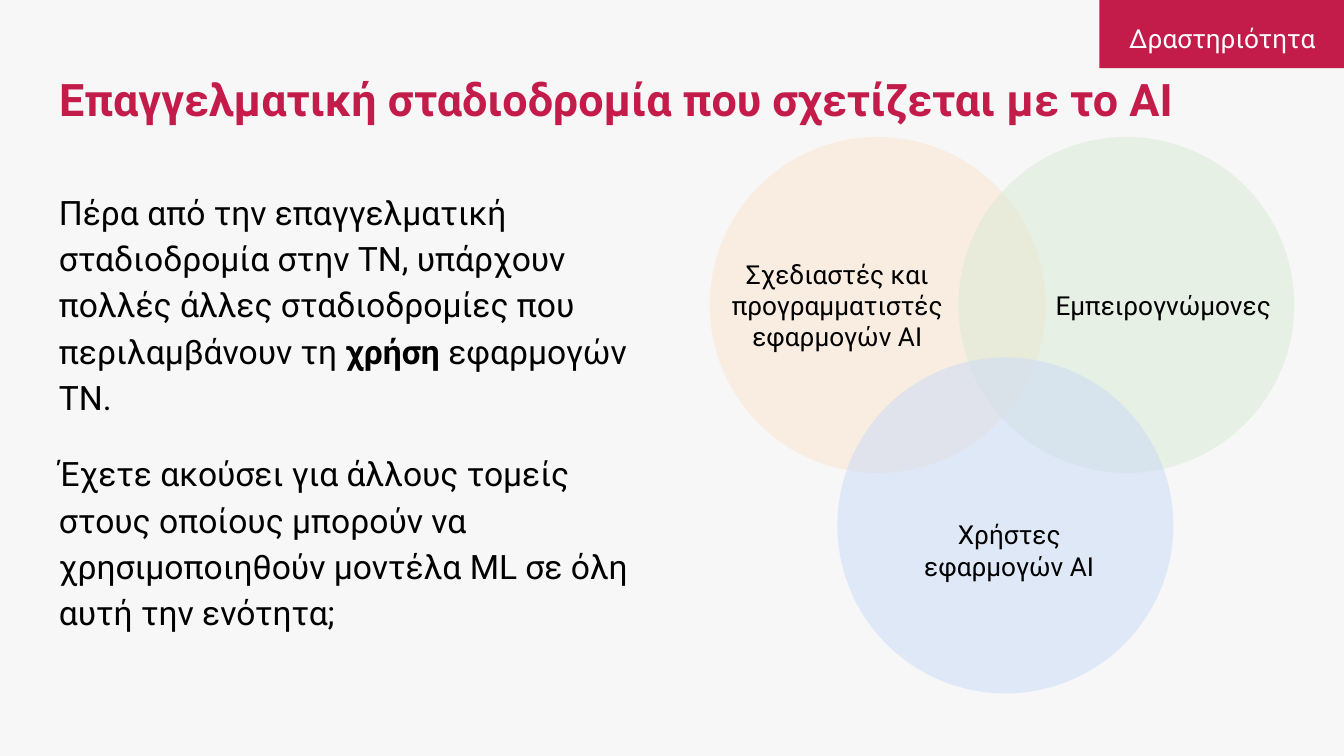
from pptx import Presentation
from pptx.dml.color import RGBColor
from pptx.enum.shapes import MSO_SHAPE
from pptx.enum.text import MSO_ANCHOR, MSO_AUTO_SIZE, PP_ALIGN
from pptx.oxml.ns import qn
from pptx.util import Pt
from lxml import etree

RECTANGLE, OVAL = MSO_SHAPE.RECTANGLE, MSO_SHAPE.OVAL
LEFT, CENTER = PP_ALIGN.LEFT, PP_ALIGN.CENTER
TOP, MIDDLE = MSO_ANCHOR.TOP, MSO_ANCHOR.MIDDLE
NO_AUTOFIT = MSO_AUTO_SIZE.NONE

COLORS = {
    "background": "F7F7F7",
    "accent": "C31C4A",
    "text": "000000",
    "white": "FFFFFF",
    "designers": "FCE5CD",
    "experts": "D9EAD3",
    "users": "C9DAF8",
}
TITLE_ONLY = 5
MARGIN = 24.5
CIRCLE_SIZE = 180


class SlideBuilder:
    font = "Roboto"
    inset = Pt(7.2)

    def __init__(self, deck):
        self.slide = deck.slides.add_slide(deck.slide_layouts[TITLE_ONLY])
        fill = self.slide.background.fill
        fill.solid()
        fill.fore_color.rgb = self.color("background")

    def color(self, name):
        return RGBColor.from_string(COLORS[name])

    def set_text(self, box, *paragraphs, size=14, color="text", bold=False,
                 align=LEFT, anchor=TOP, line_spacing=1.0, gap=0):
        """Fill a box; each paragraph is a list of spans, odd ones emphasised."""
        frame = box.text_frame
        frame.word_wrap = True
        frame.auto_size = NO_AUTOFIT
        frame.vertical_anchor = anchor
        frame.margin_left = frame.margin_right = self.inset
        frame.margin_top = frame.margin_bottom = self.inset
        for index, spans in enumerate(paragraphs):
            para = frame.add_paragraph() if index else frame.paragraphs[0]
            para.alignment = align
            para.line_spacing = line_spacing
            para.space_before = Pt(gap if index else 0)
            for position, text in enumerate(spans):
                span = para.add_run()
                span.text = text
                span.font.name = self.font
                span.font.size = Pt(size)
                span.font.bold = bold or position % 2 == 1
                span.font.color.rgb = self.color(color)

    def title(self, text, left, top, width, height):
        box = self.slide.shapes.title
        box.left, box.top = Pt(left), Pt(top)
        box.width, box.height = Pt(width), Pt(height)
        self.set_text(box, [text], size=24, color="accent", bold=True, anchor=MIDDLE)

    def text(self, paragraphs, left, top, width, height, **style):
        box = self.slide.shapes.add_textbox(Pt(left), Pt(top), Pt(width), Pt(height))
        self.set_text(box, *paragraphs, **style)

    def shape(self, kind, color, left, top, width, height, opacity=100):
        shape = self.slide.shapes.add_shape(
            kind, Pt(left), Pt(top), Pt(width), Pt(height))
        shape.shadow.inherit = False
        shape.line.fill.background()
        shape.fill.solid()
        shape.fill.fore_color.rgb = self.color(color)
        if opacity < 100:
            solid = shape.element.spPr.find(qn("a:solidFill"))
            etree.SubElement(solid[0], qn("a:alpha"), val=str(opacity * 1000))


def main():
    deck = Presentation()
    deck.slide_width, deck.slide_height = Pt(720), Pt(405)
    page = SlideBuilder(deck)

    page.shape(RECTANGLE, "accent", 589, 0, 131, 36.5)
    page.text([["Δραστηριότητα"]], 594, 2.2, 121.7, 30.2,
              color="white", align=CENTER, line_spacing=1.15)
    page.title("Επαγγελματική σταδιοδρομία που σχετίζεται με το AI",
               MARGIN, 25.2, 720 - 2 * MARGIN, 54.7)
    page.text(
        [
            ["Πέρα από την επαγγελματική σταδιοδρομία στην ΤΝ, υπάρχουν πολλές "
             "άλλες σταδιοδρομίες που περιλαμβάνουν τη ", "χρήση", " εφαρμογών ΤΝ."],
            ["Έχετε ακούσει για άλλους τομείς στους οποίους μπορούν να "
             "χρησιμοποιηθούν μοντέλα ML σε όλη αυτή την ενότητα;"],
        ],
        MARGIN, 92.2, 322.6, 288, size=18, line_spacing=1.15, gap=16)

    circles = [("designers", 380.2, 73.4), ("experts", 513.4, 73.4),
               ("users", 448.6, 191.5)]
    for color, left, top in circles:
        page.shape(OVAL, color, left, top, CIRCLE_SIZE, CIRCLE_SIZE, opacity=50)

    labels = [
        ("Χρήστες εφαρμογών AI", 475.9, 270.7, 129.6, 48.2),
        ("Σχεδιαστές και προγραμματιστές εφαρμογών AI", 383.8, 131, 129.6, 82),
        ("Εμπειρογνώμονες", 556.6, 147.6, 133.2, 31.7),
    ]
    for label, *place in labels:
        page.text([[label]], *place, align=CENTER)

    deck.save("out.pptx")


if __name__ == "__main__":
    main()
